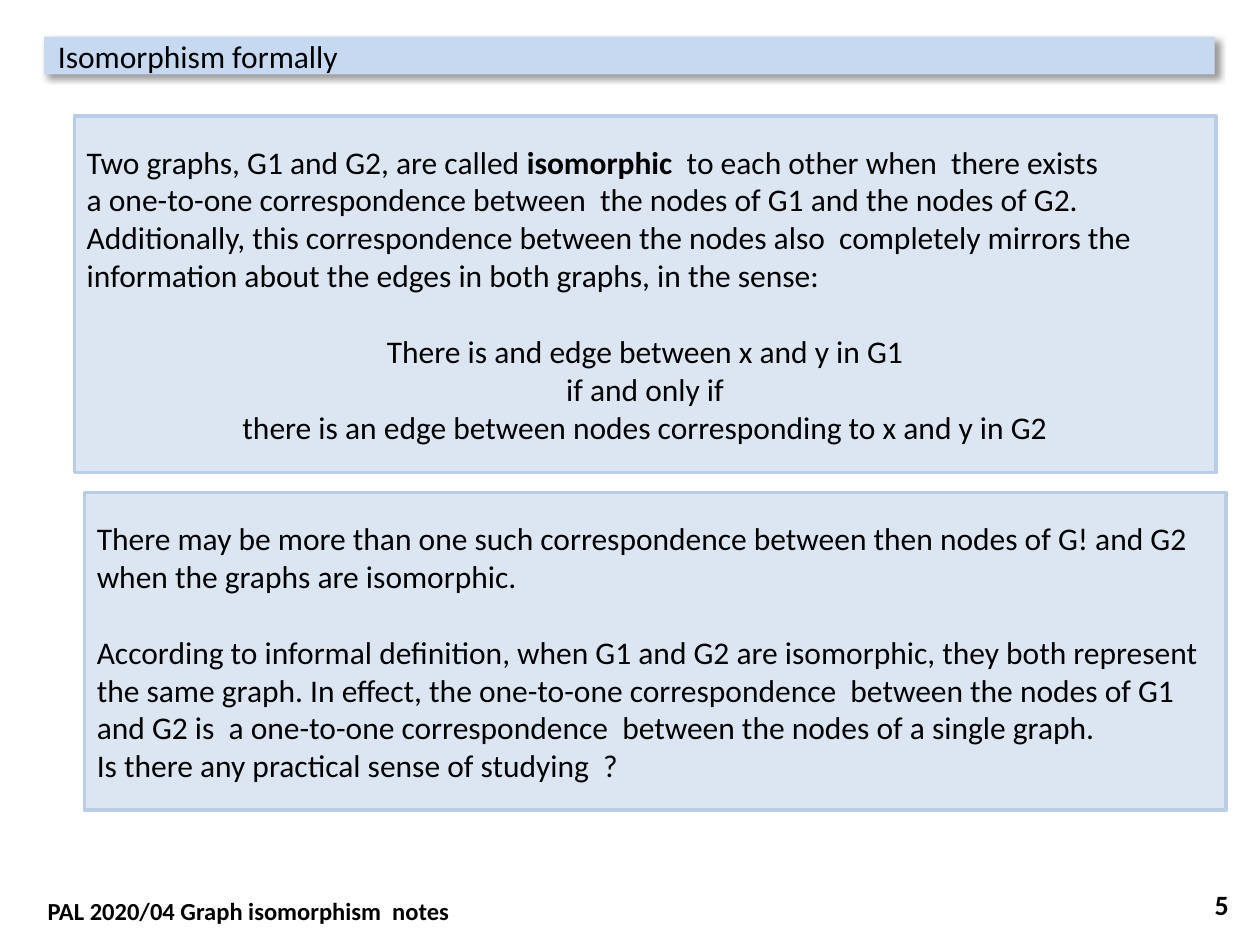
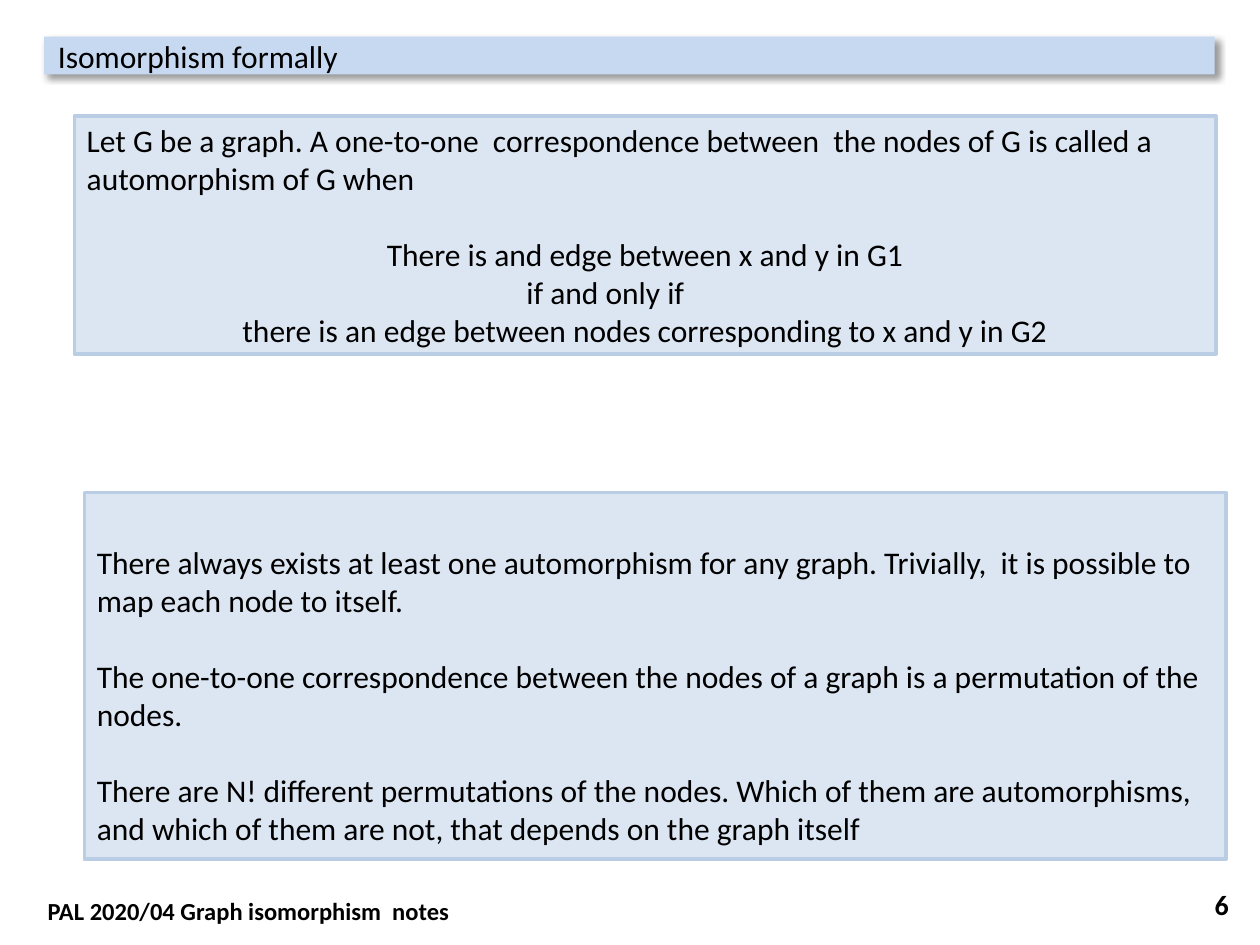
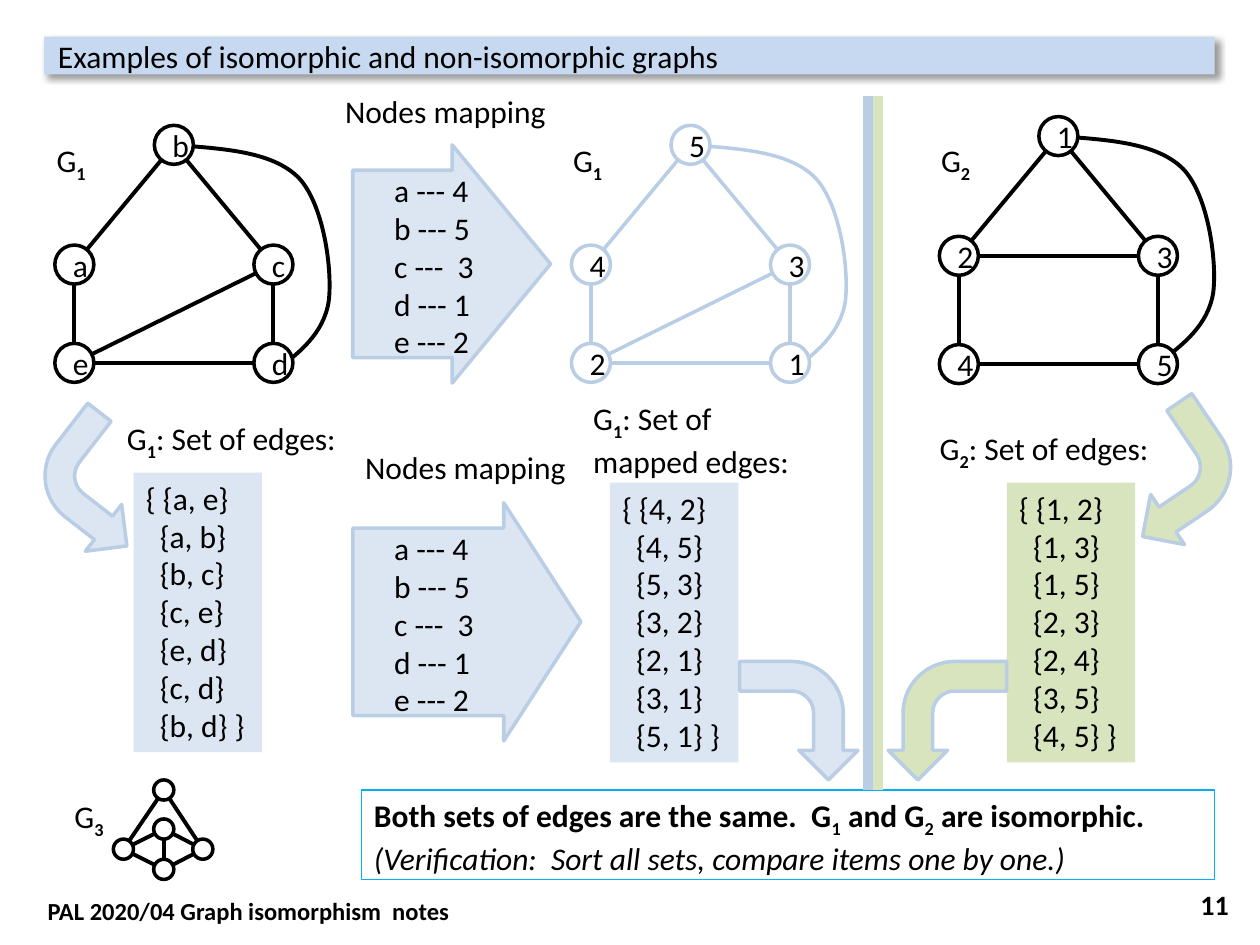
"""Build three slides on graph isomorphism."""
from lxml import etree
from pptx import Presentation
from pptx import util as u
from pptx.dml.color import RGBColor
from pptx.enum import shapes, text
from pptx.oxml.ns import qn

BLACK = RGBColor(0x00, 0x00, 0x00)
WHITE = RGBColor(0xFF, 0xFF, 0xFF)
BAND = RGBColor(0xC6, 0xD9, 0xF1)
PALE_BLUE = RGBColor(0xDC, 0xE6, 0xF2)
EDGE_BLUE = RGBColor(0xB9, 0xCD, 0xE5)
GREEN = RGBColor(0xD7, 0xE4, 0xBD)
CYAN = RGBColor(0x00, 0xB0, 0xF0)

FONT = "Calibri"
BODY_SIZE = 18
BLANK_LINE = u.Pt(22)
TWO_SPACES = 0.11
FOOTER = "PAL 2020/04 Graph isomorphism  notes"
SHAPE = shapes.MSO_SHAPE
CENTER = text.PP_ALIGN.CENTER
MIDDLE = text.MSO_ANCHOR.MIDDLE

MAPPING_LINES = ["a --- 4", "b --- 5", "c ---  3", "d --- 1", "e --- 2"]
MAPPING = {line[0]: line[-1] for line in MAPPING_LINES}
G1_EDGES = ["ae", "ab", "bc", "ce", "ed", "cd", "bd"]
MAPPED_EDGES = [MAPPING[start] + MAPPING[end] for start, end in G1_EDGES]
G2_EDGES = ["12", "13", "15", "23", "24", "35", "45"]
ARC = [(0.95, 0.16), (1.34, 0.19), (1.73, 0.21), (1.94, 0.42), (2.14, 0.63),
       (2.21, 1.15), (2.18, 1.4), (2.14, 1.66), (1.94, 1.82), (1.73, 1.97)]
G3_NODES = {"top": (0.39, 0.08), "left": (0.07, 0.55), "mid": (0.39, 0.39),
            "low": (0.39, 0.71), "right": (0.7, 0.55)}
G3_EDGES = [("mid", "left"), ("low", "left"), ("low", "mid"), ("mid", "right"),
            ("low", "right"), ("right", "top"), ("left", "top")]


def inches(*values):
    """Turn numbers into lengths."""
    return [u.Inches(value) for value in values]


def indent(paragraph, amount):
    """Indent a paragraph by a number of inches."""
    paragraph._p.get_or_add_pPr().set("marL", str(u.Inches(amount)))


def style_run(run, size=BODY_SIZE, style=""):
    """Format a run; style holds b for bold, i for italic, _ for subscript."""
    font = run.font
    font.name, font.size = FONT, u.Pt(size)
    font.color.rgb = BLACK
    font.bold, font.italic = "b" in style, "i" in style
    if "_" in style:
        font._element.set("baseline", "-25000")


def write(frame, lines, align=text.PP_ALIGN.LEFT, size=BODY_SIZE, style=""):
    """Fill a frame with lines, each a string or a list of (words, style)."""
    frame.word_wrap = True
    for index, line in enumerate(lines):
        paragraph = frame.add_paragraph() if index else frame.paragraphs[0]
        paragraph.alignment = align
        if isinstance(line, str):
            line = [(line, style)]
        for words, run_style in line:
            run = paragraph.add_run()
            run.text = words
            style_run(run, size, run_style)
    return frame


def add_label(slide, box, lines, **formatting):
    """Add a text box."""
    return write(slide.shapes.add_textbox(*inches(*box)).text_frame, lines, **formatting)


def add_block(slide, kind, box, fill=None, line=None, width=2):
    """Add a preset shape without a shadow."""
    block = slide.shapes.add_shape(kind, *inches(*box))
    block.shadow.inherit = False
    if fill is None:
        block.fill.background()
    else:
        block.fill.solid()
        block.fill.fore_color.rgb = fill
    if line is None:
        block.line.fill.background()
    else:
        block.line.color.rgb = line
        block.line.width = u.Pt(width)
    return block


def add_line(slide, start, end, color, width):
    """Add a straight line without a shadow."""
    line = slide.shapes.add_connector(
        shapes.MSO_CONNECTOR.STRAIGHT, *inches(*start, *end))
    line.line.color.rgb = color
    line.line.width = u.Pt(width)
    etree.SubElement(line._element.spPr, qn("a:effectLst"))


def add_curve(slide, points, color, width):
    """Add an open chain of cubic curves through start, control and end points."""
    start, *rest = [inches(*point) for point in points]
    builder = slide.shapes.build_freeform(*start)
    builder.add_line_segments(rest, close=False)
    curve = builder.convert_to_shape()
    outline = next(curve._element.iter(qn("a:path")))
    segments = outline.findall(qn("a:lnTo"))
    for first in range(0, len(segments), 3):
        bend = etree.SubElement(outline, qn("a:cubicBezTo"))
        for segment in segments[first:first + 3]:
            bend.append(segment[0])
            outline.remove(segment)
    curve.fill.background()
    curve.line.color.rgb = color
    curve.line.width = u.Pt(width)
    curve.shadow.inherit = False


def add_title_band(slide, words):
    """Turn the title placeholder into the shadowed band."""
    band = slide.shapes.title
    band.left, band.top, band.width, band.height = inches(0.35, 0.29, 9.29, 0.3)
    band.fill.solid()
    band.fill.fore_color.rgb = BAND
    effects = etree.SubElement(band._element.spPr, qn("a:effectLst"))
    shadow = etree.SubElement(effects, qn("a:outerShdw"), blurRad="50800",
                              dist="38100", dir="2700000", algn="tl", rotWithShape="0")
    tint = etree.SubElement(shadow, qn("a:srgbClr"), val="000000")
    etree.SubElement(tint, qn("a:alpha"), val="40000")
    frame = band.text_frame
    frame.auto_size = text.MSO_AUTO_SIZE.NONE
    frame.vertical_anchor = MIDDLE
    frame.margin_left = u.Inches(TWO_SPACES)
    frame.margin_right = frame.margin_top = frame.margin_bottom = 0
    write(frame, [words])


def start_slide(deck, title, number):
    """Add a slide with its title band, page number and footer."""
    slide = deck.slides.add_slide(deck.slide_layouts[5])
    add_title_band(slide, title)
    page = add_label(slide, (7.52, 6.98, 2.33, 0.4), [str(number)],
                     align=text.PP_ALIGN.RIGHT, size=16, style="b")
    page.vertical_anchor = MIDDLE
    add_label(slide, (0.28, 7.06, 9.37, 0.34), [FOOTER], size=14, style="b")
    return slide


def add_panel(slide, box, lines, gaps=(), centered=()):
    """Add a panel of prose; gaps and centered hold paragraph numbers."""
    panel = add_block(slide, SHAPE.RECTANGLE, box, PALE_BLUE, EDGE_BLUE)
    frame = write(panel.text_frame, lines)
    frame.vertical_anchor = MIDDLE
    for index in gaps:
        frame.paragraphs[index].space_before = BLANK_LINE
    for index in centered:
        frame.paragraphs[index].alignment = CENTER
    return frame


def house_nodes(labels, bottom):
    """Place five labels at the corners of a house: roof, middle, bottom."""
    corners = [(0.95, 0.16), (0.16, 1.11), (1.74, 1.11), (0.16, bottom), (1.74, bottom)]
    return dict(zip(labels, corners))


def add_graph(slide, left, top, nodes, edges, color=BLACK, width=2.25,
              diameter=0.31, labelled=True):
    """Draw a graph; in a labelled one the roof and last node join by an arc."""
    places = {name: (left + x, top + y) for name, (x, y) in nodes.items()}
    names = list(nodes)
    for start, end in edges:
        if labelled and {start, end} == {names[0], names[-1]}:
            add_curve(slide, [(left + x, top + y) for x, y in ARC], color, width)
        else:
            add_line(slide, places[start], places[end], color, width)
    for name, (x, y) in places.items():
        box = (x - diameter / 2, y - diameter / 2, diameter, diameter)
        node = add_block(slide, SHAPE.OVAL, box, WHITE, color)
        if labelled:
            write(node.text_frame, [name], align=CENTER).vertical_anchor = MIDDLE


def add_graph_name(slide, box, index, *tail):
    """Write G with a subscript, then the rest of the heading."""
    first = [("G", ""), (index, "b_")] + [(words, "") for words in tail[:1]]
    return add_label(slide, box, [first, *tail[1:]])


def add_edge_set(slide, left, top, edges, fill):
    """List a set of edges in braces on a coloured strip."""
    pairs = ["{%s, %s}" % tuple(edge) for edge in edges]
    pairs[0] = "{ " + pairs[0]
    pairs[-1] += " }"
    strip = add_block(slide, SHAPE.RECTANGLE, (left, top, 1.02, 2.22), fill)
    frame = write(strip.text_frame, pairs)
    frame.vertical_anchor = text.MSO_ANCHOR.TOP
    for paragraph in frame.paragraphs[1:]:
        indent(paragraph, TWO_SPACES)


def add_mapping(slide, top, width, head, heading):
    """Draw a broad arrow with the nodes mapping and its heading."""
    arrow = add_block(slide, SHAPE.RIGHT_ARROW, (2.8, top, width, 1.89),
                      PALE_BLUE, EDGE_BLUE)
    arrow.adjustments[0], arrow.adjustments[1] = 0.787, head
    add_label(slide, (*heading, 1.89, 0.4), ["Nodes mapping"])
    add_label(slide, (3.03, top + 0.16, 0.87, 1.62), MAPPING_LINES)


def add_bent_arrow(slide, left, top, side, fill, rotation, flip=None):
    """Draw a turned bent arrow, mirrored by flipH or flipV if given."""
    arrow = add_block(slide, SHAPE.BENT_ARROW, (left, top, side, side), fill, EDGE_BLUE)
    arrow.rotation = rotation
    if flip:
        arrow._element.spPr.find(qn("a:xfrm")).set(flip, "1")


def add_verdict(slide):
    """Add the framed conclusion."""
    verdict = add_block(slide, SHAPE.RECTANGLE, (2.87, 6.27, 6.77, 0.71),
                        line=CYAN, width=0.75)
    frame = write(verdict.text_frame, [
        [("Both sets of edges are the same.  G", "b"), ("1", "b_"), (" and G", "b"),
         ("2", "b_"), (" are isomorphic.", "b")],
        [("(Verification:  Sort all sets, compare items one by one.)", "i")]])
    frame.vertical_anchor = text.MSO_ANCHOR.TOP


def build_definition(deck):
    """Build the slide that defines isomorphism."""
    slide = start_slide(deck, "Isomorphism formally", 5)
    add_panel(slide, (0.59, 0.92, 9.06, 2.83), [
        [("Two graphs, G1 and G2, are called ", ""), ("isomorphic ", "b"),
         (" to each other when  there exists", "")],
        "a one-to-one correspondence between  the nodes of G1 and the nodes of G2.",
        "Additionally, this correspondence between the nodes also  completely mirrors "
        "the information about the edges in both graphs, in the sense:",
        "There is and edge between x and y in G1",
        "if and only if",
        "there is an edge between nodes corresponding to x and y in G2",
    ], gaps=[3], centered=[3, 4, 5])
    add_panel(slide, (0.67, 3.91, 9.06, 2.52), [
        "There may be more than one such correspondence between then nodes of G! and G2 "
        "when the graphs are isomorphic.",
        "According to informal definition, when G1 and G2 are isomorphic, they both "
        "represent the same graph. In effect, the one-to-one correspondence  between the "
        "nodes of G1 and G2 is  a one-to-one correspondence  between the nodes of a "
        "single graph.",
        "Is there any practical sense of studying  ?",
    ], gaps=[1])


def build_automorphism(deck):
    """Build the slide that defines automorphism."""
    slide = start_slide(deck, "Isomorphism formally", 6)
    definition = add_panel(slide, (0.59, 0.92, 9.06, 1.89), [
        "Let G be a graph. A one-to-one  correspondence between  the nodes of G is called "
        "a automorphism of G when",
        "There is and edge between x and y in G1",
        "if and only if",
        "there is an edge between nodes corresponding to x and y in G2",
    ], gaps=[1], centered=[1, 3])
    indent(definition.paragraphs[2], 3.49)
    remarks = add_panel(slide, (0.67, 3.91, 9.06, 2.91), [
        "There always exists at least one automorphism for any graph. Trivially,  it is "
        "possible to map each node to itself.",
        "The one-to-one correspondence between the nodes of a graph is a permutation of "
        "the nodes.",
        "There are N! different permutations of the nodes. Which of them are "
        "automorphisms, and which of them are not, that depends on the graph itself",
    ], gaps=[1, 2])
    remarks.margin_top = u.Inches(0.35)


def build_examples(deck):
    """Build the slide that compares graphs by their edge sets."""
    slide = start_slide(deck, "Examples of isomorphic and non-isomorphic graphs", 11)
    add_graph(slide, 0.43, 0.99, house_nodes("baced", 1.89), G1_EDGES)
    add_graph(slide, 4.53, 0.99, house_nodes("54321", 1.89), MAPPED_EDGES, EDGE_BLUE, 2)
    add_graph(slide, 7.45, 0.92, house_nodes("12345", 1.97), G2_EDGES)
    add_graph(slide, 0.91, 6.19, G3_NODES, G3_EDGES, diameter=0.16, labelled=False)
    for left, index in ((0.35, "1"), (4.45, "1"), (7.37, "2")):
        add_graph_name(slide, (left, 1.07, 0.55, 0.4), index)
    small_name = add_graph_name(slide, (0.59, 6.35, 0.39, 0.3), "3")
    small_name.margin_left = small_name.margin_top = small_name.margin_bottom = 0
    small_name.margin_right = u.Inches(0.04)
    small_name.vertical_anchor = MIDDLE

    add_mapping(slide, 1.15, 1.57, 0.497, (2.64, 0.68))
    add_mapping(slide, 3.99, 1.81, 0.338, (2.8, 3.51))
    add_edge_set(slide, 1.06, 3.75, G1_EDGES, PALE_BLUE)
    add_edge_set(slide, 4.84, 3.83, MAPPED_EDGES, PALE_BLUE)
    add_edge_set(slide, 7.99, 3.83, G2_EDGES, GREEN)
    add_graph_name(slide, (0.91, 3.28, 2.13, 0.4), "1", ": Set of edges:")
    add_graph_name(slide, (4.61, 3.12, 2.13, 0.71), "1", ": Set of", "mapped edges:")
    add_graph_name(slide, (7.36, 3.36, 2.13, 0.4), "2", ": Set of edges:")
    add_verdict(slide)

    add_bent_arrow(slide, 5.87, 5.25, 0.94, PALE_BLUE, 90)
    add_bent_arrow(slide, 7.05, 5.25, 0.94, GREEN, 270, "flipH")
    add_bent_arrow(slide, 8.85, 3.31, 0.96, GREEN, 145.9)
    add_bent_arrow(slide, 0.31, 3.39, 0.94, PALE_BLUE, 37.8, "flipV")
    for x, color in ((6.89, EDGE_BLUE), (6.97, GREEN)):
        add_line(slide, (x, 0.76), (x, 6.27), color, 6)


def main():
    """Build and save the deck."""
    deck = Presentation()
    deck.slide_width, deck.slide_height = inches(10, 7.5)
    build_definition(deck)
    build_automorphism(deck)
    build_examples(deck)
    deck.save("out.pptx")


if __name__ == "__main__":
    main()
